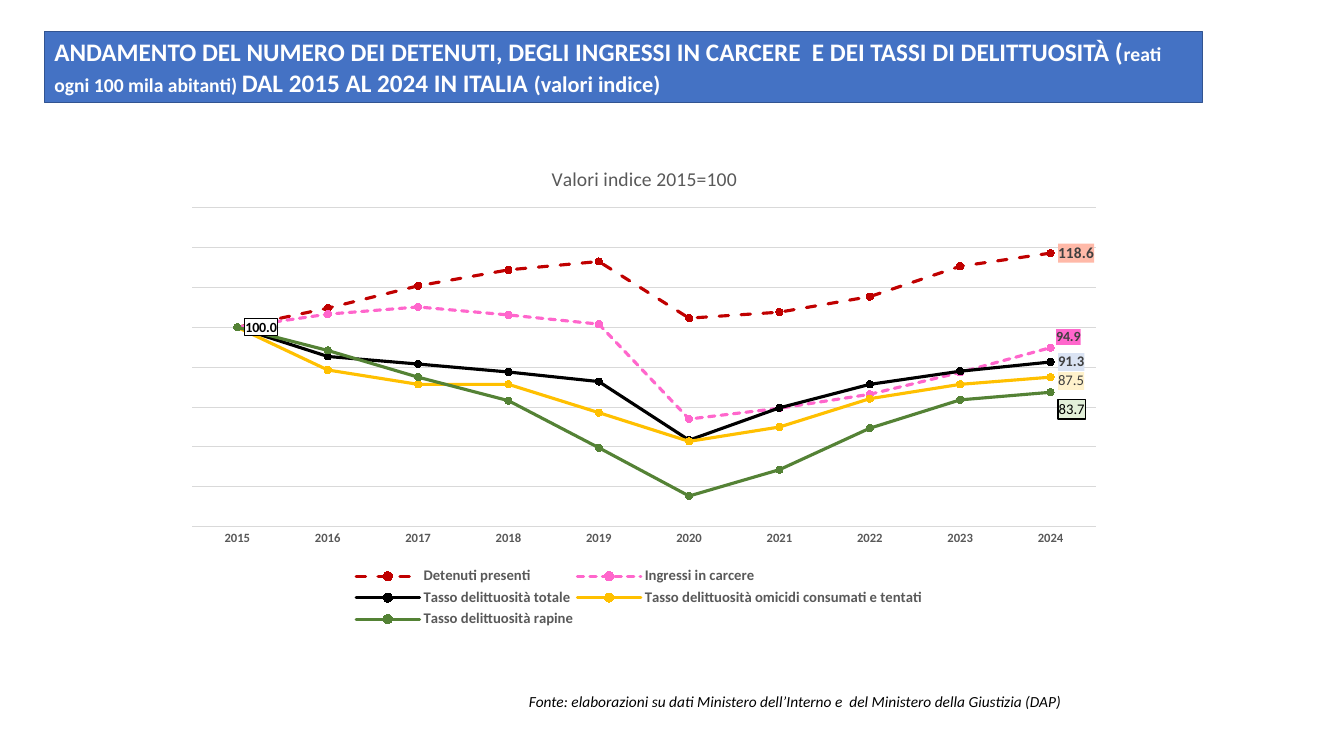
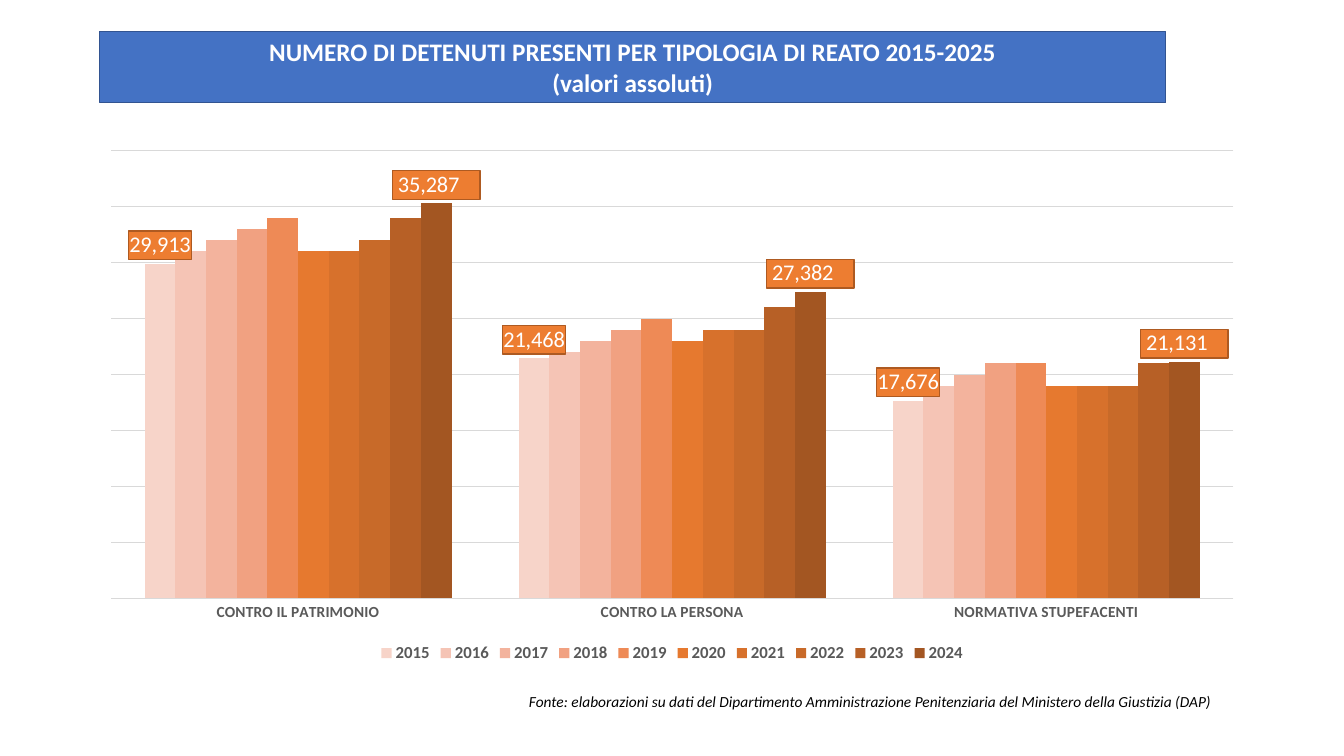
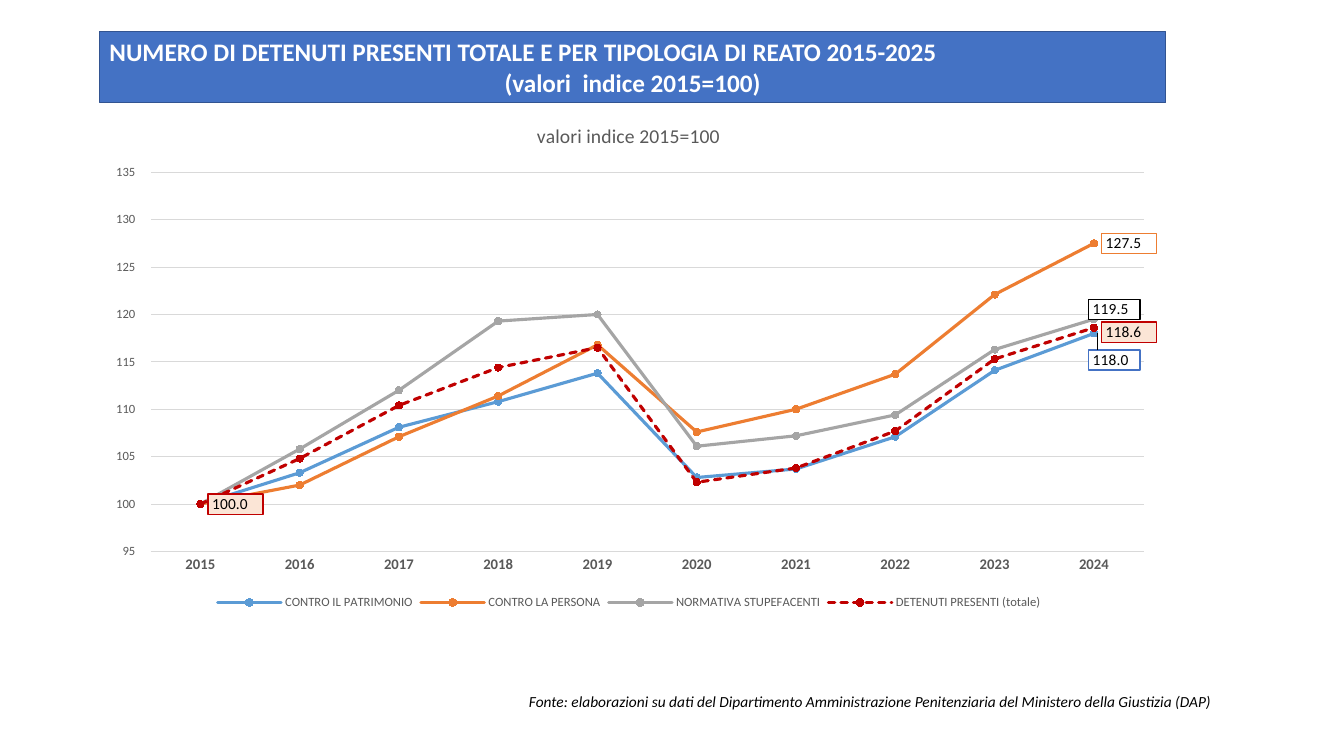
from dataclasses import dataclass
from typing import Optional

from lxml import etree
from pptx import Presentation
from pptx import util as u
from pptx.chart import data as cd
from pptx.dml.color import RGBColor
from pptx.enum import chart as ch
from pptx.enum import dml, shapes, text
from pptx.oxml import ns


# Theme and records
@dataclass(frozen=True)
class Theme:
    font: str = "Calibri"
    banner: str = "4472C4"
    banner_line: str = "325491"
    white: str = "FFFFFF"
    black: str = "000000"
    grey: str = "595959"
    label_grey: str = "404040"
    grid: str = "D9D9D9"
    red: str = "C00000"
    pink: str = "FF66CC"
    yellow: str = "FFC000"
    green: str = "548235"
    blue: str = "5B9BD5"
    orange: str = "ED7D31"
    orange_line: str = "AE5A21"
    silver: str = "A5A5A5"
    peach: str = "FBE5D6"
    title_size: float = 18
    source_size: float = 11
    chart_title_size: float = 14
    label_size: float = 10.5


T = Theme()
DASH, SHORT_DASH = dml.MSO_LINE.DASH, dml.MSO_LINE.SQUARE_DOT
ONE_DECIMAL = "#,##0.0"
ACCOUNTING = '_-* #,##0\\ _€_-;\\-* #,##0\\ _€_-;_-* "-"?'
ACCOUNTING_DECIMAL = '_-* #,##0.0\\ _€_-;\\-* #,##0.0\\ _€_-;_-* "-"?'
NARROW_DECIMAL = "_-* #,##0.0\\ _€"
FIRST, LAST = 0, 9
YEARS = [str(y) for y in range(2015, 2025)]


@dataclass(frozen=True)
class Box:
    left: float
    top: float
    width: float
    height: float

    def cm(self) -> list:
        return [u.Cm(v) for v in (self.left, self.top, self.width, self.height)]


@dataclass(frozen=True)
class Run:
    text: str
    size: float = T.title_size


@dataclass(frozen=True)
class Line:
    runs: tuple
    centred: bool = False


@dataclass(frozen=True)
class Label:
    point: Optional[int]  # None labels the whole series
    fill: str
    line: Optional[str] = None
    size: float = T.label_size
    color: str = T.black
    bold: bool = False
    fmt: str = ONE_DECIMAL
    shift: Optional[tuple] = None
    line_width: float = 1


@dataclass(frozen=True)
class Series:
    name: str
    values: list
    color: str
    dash: Optional[object] = None
    labels: tuple = ()


@dataclass(frozen=True)
class ChartStyle:
    kind: object
    box: Box
    plot: tuple
    scale: tuple  # minimum, maximum, step
    cat_size: float
    legend_size: float
    legend_bold: bool = True
    legend: Optional[tuple] = None
    title: str = ""
    title_at: tuple = ()
    show_values: bool = False
    fmt: str = ONE_DECIMAL


def rgb(color: str) -> RGBColor:
    return RGBColor.from_string(color)


def set_font(font, size: float, color: str, bold: bool = False, italic: bool = False) -> None:
    font.name, font.size, font.bold, font.italic = T.font, u.Pt(size), bold, italic
    font.color.rgb = rgb(color)


# Banner and source line
def add_banner(slide, box: Box, lines: list) -> None:
    sp = slide.shapes.add_shape(shapes.MSO_SHAPE.RECTANGLE, *box.cm())
    sp.shadow.inherit = False
    sp.fill.solid()
    sp.fill.fore_color.rgb = rgb(T.banner)
    sp.line.color.rgb = rgb(T.banner_line)
    sp.line.width = u.Pt(1)
    tf = sp.text_frame
    tf.word_wrap = True
    tf.auto_size = text.MSO_AUTO_SIZE.SHAPE_TO_FIT_TEXT
    tf.vertical_anchor = text.MSO_ANCHOR.MIDDLE
    for i, line in enumerate(lines):
        p = tf.add_paragraph() if i else tf.paragraphs[0]
        p.alignment = text.PP_ALIGN.CENTER if line.centred else text.PP_ALIGN.LEFT
        for run in line.runs:
            r = p.add_run()
            r.text = run.text
            set_font(r.font, run.size, T.white, bold=True)


def add_source(slide, origin: str, width: float) -> None:
    tf = slide.shapes.add_textbox(*Box(13.08, 17.32, width, 0.74).cm()).text_frame
    tf.word_wrap = False
    tf.auto_size = text.MSO_AUTO_SIZE.SHAPE_TO_FIT_TEXT
    r = tf.paragraphs[0].add_run()
    r.text = f"Fonte: elaborazioni su dati {origin} (DAP)"
    set_font(r.font, T.source_size, T.black, italic=True)


# Chart XML helpers
def add_child(parent, tag: str, **attrs: str):
    return etree.SubElement(parent, ns.qn(tag), attrs)


def set_layout(parent, index: int, place: tuple, edge: bool = True, inner: bool = False) -> None:
    for old in parent.findall(ns.qn("c:layout")):
        parent.remove(old)
    layout = etree.Element(ns.qn("c:layout"))
    manual = add_child(layout, "c:manualLayout")
    if inner:
        add_child(manual, "c:layoutTarget", val="inner")
    if edge:
        add_child(manual, "c:xMode", val="edge")
        add_child(manual, "c:yMode", val="edge")
    for key, value in zip("xywh", place):
        add_child(manual, f"c:{key}", val=str(value))
    parent.insert(index, layout)


def add_solid(parent, color: str) -> None:
    add_child(add_child(parent, "a:solidFill"), "a:srgbClr", val=color)


def add_label(series, label: Label) -> None:
    whole = label.point is None
    dl = series.data_labels if whole else series.points[label.point].data_label
    set_font(dl.font, label.size, label.color, label.bold)
    if whole:
        dl.show_value = True
        dl.position = ch.XL_LABEL_POSITION.OUTSIDE_END
        el = series.data_labels._element
    else:
        dl.position = ch.XL_LABEL_POSITION.RIGHT
        series.data_labels.show_value = False
        el = series._element.xpath(f'.//c:dLbl[c:idx/@val="{label.point}"]')[0]
    tx_pr = el.find(ns.qn("c:txPr"))
    num_fmt = etree.Element(ns.qn("c:numFmt"), formatCode=label.fmt, sourceLinked="0")
    sp_pr = etree.Element(ns.qn("c:spPr"))
    add_solid(sp_pr, label.fill)
    if label.line:
        add_solid(add_child(sp_pr, "a:ln", w=str(u.Pt(label.line_width))), label.line)
    tx_pr.addprevious(num_fmt)
    tx_pr.addprevious(sp_pr)
    if label.shift:
        set_layout(el, 1, label.shift, edge=False)


# Charts
def style_series(s, item: Series, is_line: bool) -> None:
    if is_line:
        s.smooth = False
        s.format.line.color.rgb = rgb(item.color)
        s.format.line.width = u.Pt(2.25)
        if item.dash:
            s.format.line.dash_style = item.dash
        s._element.xpath("./c:spPr/a:ln")[0].set("cap", "rnd")
        s.marker.style, s.marker.size = ch.XL_MARKER_STYLE.CIRCLE, 5
        s.marker.format.fill.solid()
        s.marker.format.fill.fore_color.rgb = rgb(item.color)
        s.marker.format.line.color.rgb = rgb(item.color)
    else:
        s.format.fill.solid()
        s.format.fill.fore_color.rgb = rgb(item.color)
    for label in item.labels:
        add_label(s, label)


def add_chart(slide, style: ChartStyle, cats: list, items: list) -> None:
    data = cd.CategoryChartData(number_format=style.fmt)
    data.categories = cats
    for item in items:
        data.add_series(item.name, item.values)
    chart = slide.shapes.add_chart(style.kind, *style.box.cm(), data).chart
    set_font(chart.font, 10, T.black)
    plot = chart.plots[0]
    plot.vary_by_categories = False
    is_line = style.kind == ch.XL_CHART_TYPE.LINE_MARKERS
    if not is_line:
        plot.gap_width, plot.overlap = 219, 0
    for s, item in zip(plot.series, items):
        style_series(s, item, is_line)

    # Title
    chart.has_title = bool(style.title)
    if style.title:
        r = chart.chart_title.text_frame.paragraphs[0].add_run()
        r.text = style.title
        set_font(r.font, T.chart_title_size, T.grey)
        set_layout(chart.chart_title._element, 1, style.title_at)

    # Axes
    cat, val = chart.category_axis, chart.value_axis
    for axis in (cat, val):
        axis.major_tick_mark = axis.minor_tick_mark = ch.XL_TICK_MARK.NONE
    set_font(cat.tick_labels.font, style.cat_size, T.grey, bold=True)
    cat.tick_label_position = ch.XL_TICK_LABEL_POSITION.NEXT_TO_AXIS
    val.minimum_scale, val.maximum_scale, val.major_unit = style.scale
    val.has_major_gridlines = True
    for line in (cat.format.line, val.major_gridlines.format.line):
        line.color.rgb = rgb(T.grid)
        line.width = u.Pt(0.75)
    val.visible = style.show_values
    if style.show_values:
        set_font(val.tick_labels.font, 9, T.grey)
        val.tick_labels.number_format = "0\\ _€_-"
        val.tick_labels.number_format_is_linked = False
        val.format.line.fill.background()

    # Legend and plot area
    chart.has_legend = True
    chart.legend.position = ch.XL_LEGEND_POSITION.BOTTOM
    chart.legend.include_in_layout = False
    set_font(chart.legend.font, style.legend_size, T.grey, style.legend_bold)
    if style.legend:
        set_layout(chart.legend._element, 1, style.legend)
    set_layout(chart._chartSpace.chart.plotArea, 0, style.plot, inner=True)


# Content
WIDE_BANNER = Box(1.12, 0.79, 29.18, 1.8)
BANNER = Box(2.51, 0.79, 26.87, 1.8)
JUSTICE = "del Dipartimento Amministrazione Penitenziaria del Ministero della Giustizia"
PRESENT = [100, 104.8, 110.4, 114.4, 116.5, 102.3, 103.8, 107.7, 115.3, 118.6]

RATES = [
    Series("Detenuti presenti", PRESENT, T.red, DASH,
           (Label(LAST, "FFB9A8", size=11, color=T.label_grey, bold=True),)),
    Series("Ingressi in carcere",
           [100, 103.3, 105.1, 103.1, 100.8, 77, 79.7, 83.2, 88.7, 94.9], T.pink, SHORT_DASH,
           (Label(LAST, T.pink, size=10, color=T.label_grey, bold=True, shift=(-0.002, -0.022)),)),
    Series("Tasso delittuosità totale",
           [100, 92.7, 90.8, 88.8, 86.4, 71.7, 79.8, 85.7, 89, 91.3], T.black, None,
           (Label(LAST, "DAE3F3", color=T.label_grey, bold=True),)),
    Series("Tasso delittuosità omicidi consumati e tentati",
           [100, 89.3, 85.7, 85.7, 78.6, 71.4, 75, 82.1, 85.7, 87.5], T.yellow, None,
           (Label(LAST, "FFF2CC", color=T.label_grey, shift=(0, 0.008)),)),
    Series("Tasso delittuosità rapine",
           [100, 94.2, 87.5, 81.6, 69.8, 57.7, 64.3, 74.7, 81.8, 83.7], T.green, None,
           (Label(FIRST, T.white, T.black, size=10, bold=True, line_width=0.75),
            Label(LAST, "E2F0D9", T.black, shift=(0, 0.035)))),
]

CRIMES = ["CONTRO IL PATRIMONIO", "CONTRO LA PERSONA", "NORMATIVA STUPEFACENTI"]
COUNTS = [
    [29913, 31000, 32000, 33000, 34000, 31000, 31000, 32000, 34000, 35287],
    [21468, 22000, 23000, 24000, 25000, 23000, 24000, 24000, 26000, 27382],
    [17676, 19000, 20000, 21000, 21000, 19000, 19000, 19000, 21000, 21131],
]
SHADES = ["F7D4C9", "F5C4B5", "F3B39D", "F1A181", "EE8A56",
          "E6792F", "D7712C", "C86A29", "B76026", "A35622"]
COUNT_LABELS = {
    year: (Label(None, T.orange, T.orange_line, 16, T.white, fmt=fmt),)
    for year, fmt in (("2015", "#,##0"), ("2024", ACCOUNTING))
}


def index_label(point: int, fill: str, line: str, shift: Optional[tuple] = None,
                fmt: str = ACCOUNTING_DECIMAL) -> Label:
    return Label(point, fill, line, 11, fmt=fmt, shift=shift)


INDEXES = [
    Series(CRIMES[0], [100, 103.3, 108.1, 110.8, 113.8, 102.8, 103.7, 107.1, 114.1, 118],
           T.blue, None,
           (index_label(LAST, T.white, T.banner, (-0.012, 0.052), NARROW_DECIMAL),)),
    Series(CRIMES[1], [100, 102, 107.1, 111.4, 116.8, 107.6, 110, 113.7, 122.1, 127.5],
           T.orange, None, (index_label(LAST, T.white, T.orange),)),
    Series(CRIMES[2], [100, 105.8, 112, 119.3, 120, 106.1, 107.2, 109.4, 116.3, 119.5],
           T.silver, None,
           (index_label(LAST, T.white, T.black, (-0.012, -0.019), NARROW_DECIMAL),)),
    Series("DETENUTI PRESENTI (totale)", PRESENT, T.red, SHORT_DASH,
           (index_label(FIRST, T.peach, T.red),
            index_label(LAST, T.peach, T.red, (0, 0.009)))),
]


def main() -> None:
    prs = Presentation()
    prs.slide_width, prs.slide_height = u.Cm(33.87), u.Cm(19.05)
    rates, counts, indexes = (prs.slides.add_slide(prs.slide_layouts[6]) for _ in range(3))

    # Prison population and crime rates
    add_banner(rates, WIDE_BANNER, [Line((
        Run("ANDAMENTO DEL NUMERO DEI DETENUTI, DEGLI INGRESSI IN CARCERE  E DEI TASSI DI DELITTUOSITÀ ("),
        Run("reati ogni 100 mila abitanti) ", 14),
        Run("DAL 2015 AL 2024 IN ITALIA "),
        Run("(valori indice)", 16)))])
    add_source(rates, "Ministero dell’Interno e  del Ministero della Giustizia", 13.94)
    add_chart(rates, ChartStyle(
        ch.XL_CHART_TYPE.LINE_MARKERS, Box(4.37, 3.68, 23.72, 12.24),
        plot=(0.02, 0.127, 0.96, 0.657), scale=(50, 130, 10), cat_size=9, legend_size=10.5,
        legend=(0.19, 0.86, 0.61, 0.14), title="Valori indice 2015=100",
        title_at=(0.398, 0.033)), YEARS, RATES)

    # Prisoners by type of crime
    add_banner(counts, BANNER, [
        Line((Run("NUMERO DI DETENUTI PRESENTI PER TIPOLOGIA DI REATO 2015-2025"),), True),
        Line((Run("(valori assoluti)"),), True)])
    add_source(counts, JUSTICE, 17.83)
    by_year = [Series(year, list(values), shade, labels=COUNT_LABELS.get(year, ()))
               for year, values, shade in zip(YEARS, zip(*COUNTS), SHADES)]
    add_chart(counts, ChartStyle(
        ch.XL_CHART_TYPE.COLUMN_CLUSTERED, Box(2.21, 3.53, 29.46, 13.28),
        plot=(0.02, 0.02, 0.96, 0.85), scale=(0, 40000, 5000), cat_size=11, legend_size=12,
        fmt="#,##0"), CRIMES, by_year)

    # Index by type of crime
    add_banner(indexes, BANNER, [
        Line((Run("NUMERO DI DETENUTI PRESENTI TOTALE E PER TIPOLOGIA DI REATO 2015-2025"),)),
        Line((Run("(valori  indice 2015=100)"),), True)])
    add_source(indexes, JUSTICE, 17.83)
    add_chart(indexes, ChartStyle(
        ch.XL_CHART_TYPE.LINE_MARKERS, Box(2.31, 2.59, 27.08, 12.88),
        plot=(0.055, 0.136, 0.924, 0.742), scale=(95, 135, 5), cat_size=10.5, legend_size=9,
        legend_bold=False, title="valori indice 2015=100", title_at=(0.411, 0.031),
        show_values=True), YEARS, INDEXES)

    prs.save("out.pptx")


if __name__ == "__main__":
    main()
